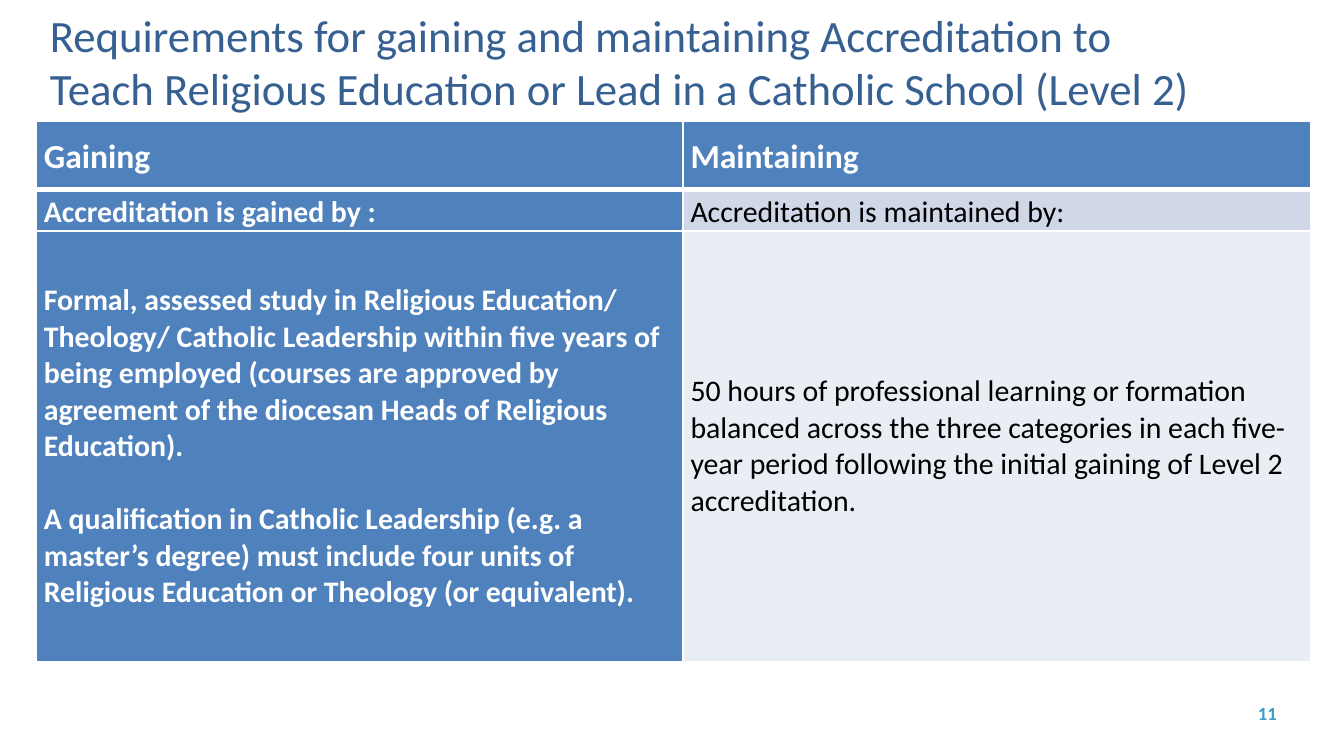
from dataclasses import dataclass

from lxml import etree
from pptx import Presentation
from pptx.dml.color import RGBColor
from pptx.enum.text import MSO_ANCHOR, MSO_AUTO_SIZE, PP_ALIGN
from pptx.oxml.ns import qn
from pptx.util import Cm, Pt

MID, TOP = MSO_ANCHOR.MIDDLE, MSO_ANCHOR.TOP
LEFT, RIGHT = PP_ALIGN.LEFT, PP_ALIGN.RIGHT


@dataclass(frozen=True)
class Theme:
    font: str = "Calibri"
    title: str = "376092"
    blue: str = "4F81BD"
    band: str = "D0D8E8"
    pale: str = "E9EDF4"
    white: str = "FFFFFF"
    black: str = "000000"
    page: str = "3E9DC8"
    big: int = 24
    head: int = 18
    body: int = 16
    small: int = 10


theme = Theme()


def write(frame, text, size, color, bold=False, align=LEFT, line=1.0, gap=0):
    """Write one paragraph per line of text; gap is the space between them."""
    frame.text = text
    for i, para in enumerate(frame.paragraphs):
        para.alignment = align
        para.line_spacing = line
        para.space_before = Pt(gap if i else 0)
        font = para.runs[0].font
        font.name, font.size, font.bold = theme.font, Pt(size), bold
        font.color.rgb = RGBColor.from_string(color)


def edge(cell, side, width):
    """Draw one white border of a cell."""
    props = cell._tc.get_or_add_tcPr()
    line = etree.SubElement(props, qn(f"a:ln{side}"), w=str(Pt(width)))
    fill = etree.SubElement(line, qn("a:solidFill"))
    etree.SubElement(fill, qn("a:srgbClr"), val=theme.white)


deck = Presentation()
deck.slide_width, deck.slide_height = Cm(25.4), Cm(14.29)
slide = deck.slides.add_slide(deck.slide_layouts[5])

# Title
title = slide.shapes.title
title.left, title.top, title.width, title.height = Cm(0.69), Cm(0), Cm(22.23), Cm(2.31)
frame = title.text_frame
frame.word_wrap = True
frame.auto_size = MSO_AUTO_SIZE.NONE
frame.vertical_anchor = MID
write(frame, "Requirements for gaining and maintaining Accreditation to\n"
      "Teach Religious Education or Lead in a Catholic School (Level 2)",
      theme.big, theme.title)

# Table: left column and header in blue, right column banded
rows = [
    ("Gaining", "Maintaining"),
    ("Accreditation is gained by :", "Accreditation is maintained by:"),
    ("Formal, assessed study in Religious Education/ Theology/ Catholic "
     "Leadership within five years of being employed (courses are approved by "
     "agreement of the diocesan Heads of Religious Education).\n"
     "A qualification in Catholic Leadership (e.g. a master’s degree) must "
     "include four units of Religious Education or Theology (or equivalent).",
     "50 hours of professional learning or formation balanced across the three "
     "categories in each five-year period following the initial gaining of "
     "Level 2 accreditation."),
]
wide = [12.22, 11.86]
high = [1.3, 0.78, 8.14]
fills = [theme.blue, theme.band, theme.pale]

table = slide.shapes.add_table(3, 2, Cm(0.69), Cm(2.29), Cm(sum(wide)), Cm(sum(high))).table
table.first_col = True
for col, width in zip(table.columns, wide):
    col.width = Cm(width)

for r, texts in enumerate(rows):
    table.rows[r].height = Cm(high[r])
    for c, text in enumerate(texts):
        cell = table.cell(r, c)
        strong = r == 0 or c == 0
        cell.vertical_anchor = MID
        cell.margin_left = cell.margin_right = Cm(0.14)
        cell.margin_top = cell.margin_bottom = 0
        for side in "LRTB":
            thick = (r, side) in ((0, "B"), (1, "T"))
            edge(cell, side, 3 if thick else 1)
        cell.fill.solid()
        cell.fill.fore_color.rgb = RGBColor.from_string(theme.blue if strong else fills[r])
        write(cell.text_frame, text, theme.body if r else theme.head,
              theme.white if strong else theme.black, bold=strong,
              line=1.0 if r == 2 else 1.07, gap=19.5)

# Page number
box = slide.shapes.add_textbox(Cm(18.06), Cm(13.26), Cm(6.07), Cm(0.43))
frame = box.text_frame
frame.word_wrap = True
frame.vertical_anchor = TOP
frame.margin_left = frame.margin_right = frame.margin_top = frame.margin_bottom = 0
write(frame, "11", theme.small, theme.page, bold=True, align=RIGHT)

deck.save("out.pptx")
